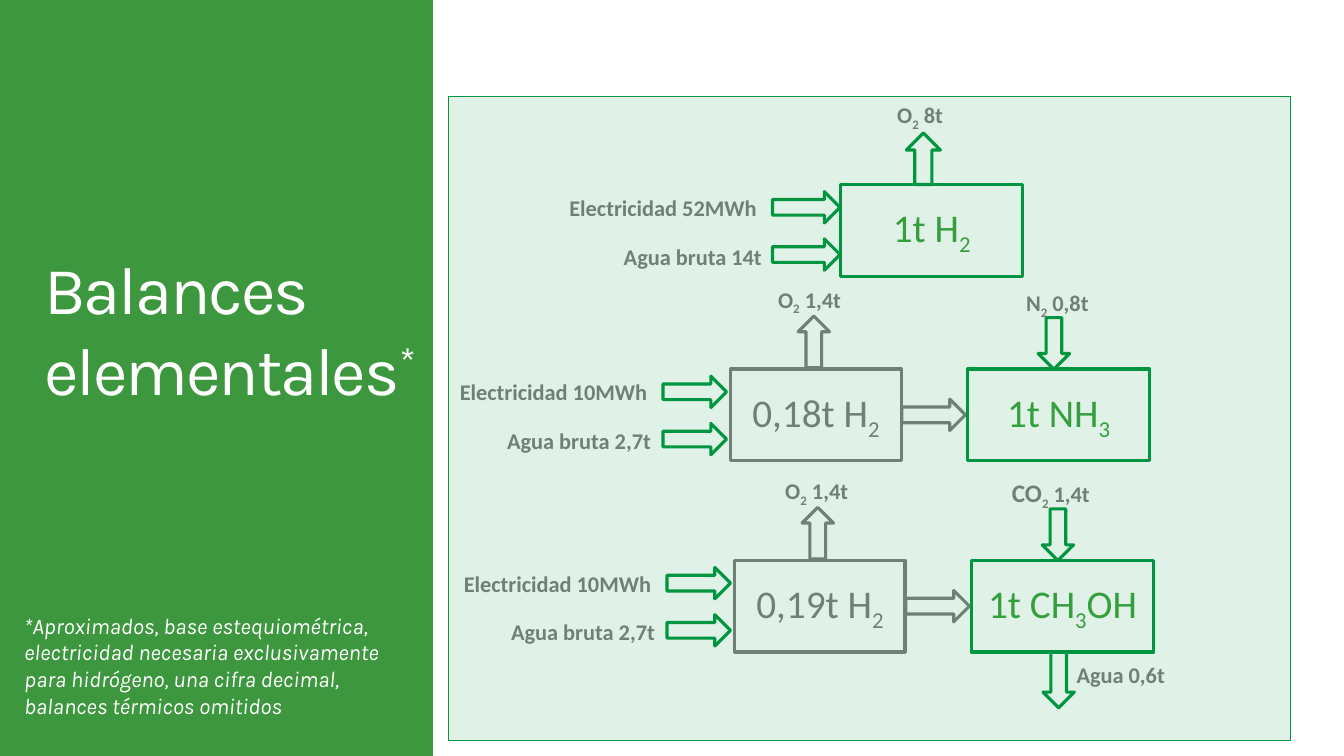
from pptx import Presentation
from pptx.dml.color import RGBColor
from pptx.enum.shapes import MSO_SHAPE
from pptx.enum.text import MSO_ANCHOR, PP_ALIGN
from pptx.oxml.ns import qn
from pptx.util import Cm, Pt
from lxml.etree import SubElement

COLOURS = {"band": "3D973E", "green": "009640", "product": "3DA13E",
           "grey": "7F7F7F", "white": "FFFFFF"}
BODY, HEADING = "Calibri", "Karla"
SUBSCRIPT, SUPERSCRIPT = -25000, 30000
BOX_HEIGHT, ARROW_HEIGHT = 2.31, 0.79


class BalanceSlide:
    """Holds the deck style and draws each kind of element on the page."""

    def __init__(self):
        self.deck = Presentation()
        self.deck.slide_width, self.deck.slide_height = Cm(33.87), Cm(19.05)
        self.page = self.deck.slides.add_slide(self.deck.slide_layouts[6])

    def colour(self, name):
        return RGBColor.from_string(COLOURS[name])

    def add_spans(self, para, text, colour, shift=SUBSCRIPT, spacing=None, lead=None, **style):
        first, *rest = text.split("_")
        pieces = [(first, 0)]
        for part in rest:
            pieces += [(part[0], shift), (part[1:], 0)]
        for index, (piece, baseline) in enumerate(pieces):
            if not piece:
                continue
            span = para.add_run()
            span.text = piece
            for name, value in style.items():
                setattr(span.font, name, value)
            if lead and index == 0:
                span.font.size = lead
            span.font.color.rgb = self.colour(colour)
            properties = span.font._element
            if baseline:
                properties.set("baseline", str(baseline))
            if spacing:
                properties.set("spc", str(spacing))

    def shape(self, kind, left, top, width, height, line, weight=2.25, fill=None):
        shape = self.page.shapes.add_shape(kind, Cm(left), Cm(top), Cm(width), Cm(height))
        shape.shadow.inherit = False
        shape.line.color.rgb = self.colour(line)
        shape.line.width = Pt(weight)
        if fill:
            shape.fill.solid()
            shape.fill.fore_color.rgb = self.colour(fill)
        else:
            shape.fill.background()
        return shape

    def box(self, left, top, width, text, line, colour):
        box = self.shape(MSO_SHAPE.RECTANGLE, left, top, width, BOX_HEIGHT, line)
        box.text_frame.vertical_anchor = MSO_ANCHOR.MIDDLE
        para = box.text_frame.paragraphs[0]
        para.alignment = PP_ALIGN.CENTER
        self.add_spans(para, text, colour, size=Pt(28), name=BODY)

    def arrow(self, left, top, line="green", width=1.6, height=ARROW_HEIGHT, turn=0):
        arrow = self.shape(MSO_SHAPE.RIGHT_ARROW, left, top, width, height, line)
        arrow.rotation = turn

    def text(self, left, top, width, height, text, colour, inset=0.25, wrap=True, **style):
        box = self.page.shapes.add_textbox(Cm(left), Cm(top), Cm(width), Cm(height))
        box.text_frame.word_wrap = wrap
        box.text_frame.margin_left = Cm(inset)
        self.add_spans(box.text_frame.paragraphs[0], text, colour, **style)

    def label(self, left, top, text, width=5, lead=None):
        self.text(left, top, width, 1, text, "grey", inset=0, lead=lead,
                  size=Pt(16), name=BODY, bold=True)

    def electrolysis(self, left, top, width, hydrogen, power, water, oxygen,
                     water_gap, oxygen_gap, line, colour, flow=1.6, vent=ARROW_HEIGHT):
        self.box(left, top, width, hydrogen, line, colour)
        self.label(left - 6.83, top + 0.11, power, 5.2)
        self.label(left - water_gap, top + 1.34, water)
        for drop in (0.18, 1.37):
            self.arrow(left - 1.71, top + drop, width=flow)
        self.arrow(left + 1.44, top - 1.08, line, 1.3, vent, 270)
        self.label(left + oxygen_gap, top - 2.22, oxygen, 2.4)

    def synthesis(self, left, top, product):
        self.arrow(left + 4.31, top + 0.76, "grey")
        self.box(left + 5.96, top, 4.6, product, "green", "product")
        self.arrow(left + 7.49, top - 1.04, width=1.3, turn=90)

    def panel(self, left, top, width, height, opacity):
        panel = self.shape(MSO_SHAPE.ROUNDED_RECTANGLE, left, top, width, height,
                           "green", 0.75, "green")
        panel.adjustments[0] = 0
        fill = panel._element.spPr.find(qn("a:solidFill"))
        SubElement(fill[0], qn("a:alpha")).set("val", str(opacity * 1000))


def main():
    slide = BalanceSlide()
    slide.shape(MSO_SHAPE.RECTANGLE, 0.03, 0, 10.87, 19.05, "band", 1, "band")
    slide.text(0.86, 6.12, 9.91, 4.37, "Balances elementales_*", "white",
               shift=SUPERSCRIPT, spacing=-150, size=Pt(48), name=HEADING)
    slide.text(0.36, 15.29, 10.52, 3.6,
               "*Aproximados, base estequiométrica, electricidad necesaria exclusivamente "
               "para hidrógeno, una cifra decimal, balances térmicos omitidos",
               "white", size=Pt(16), name=HEADING, italic=True)

    slide.electrolysis(21.18, 4.65, 4.6, "1t H_2", "Electricidad 52MWh", "Agua bruta 14t",
                       "O_2 8t", 5.46, 1.43, "green", "product", 1.7, 0.86)
    chains = [(18.42, 9.3, "0,18t H_2", "1t NH_3", 1.19),
              (18.52, 14.12, "0,19t H_2", "1t CH_3OH", 1.27)]
    for left, top, hydrogen, product, oxygen_gap in chains:
        slide.electrolysis(left, top, 4.29, hydrogen, "Electricidad 10MWh",
                           "Agua bruta 2,7t", "O_2 1,4t", 5.64, oxygen_gap, "grey", "grey")
        slide.synthesis(left, top, product)
    slide.label(25.86, 7.16, "N_2 0,8t", 2.4)
    slide.label(25.5, 11.91, "CO_2 1,4t", 2.8, Pt(18))
    slide.arrow(25.98, 16.74, width=1.4, turn=90)
    slide.label(27.13, 16.54, "Agua 0,6t")
    slide.panel(11.3, 2.44, 21.23, 16.23, 12)
    slide.deck.save("out.pptx")


if __name__ == "__main__":
    main()
